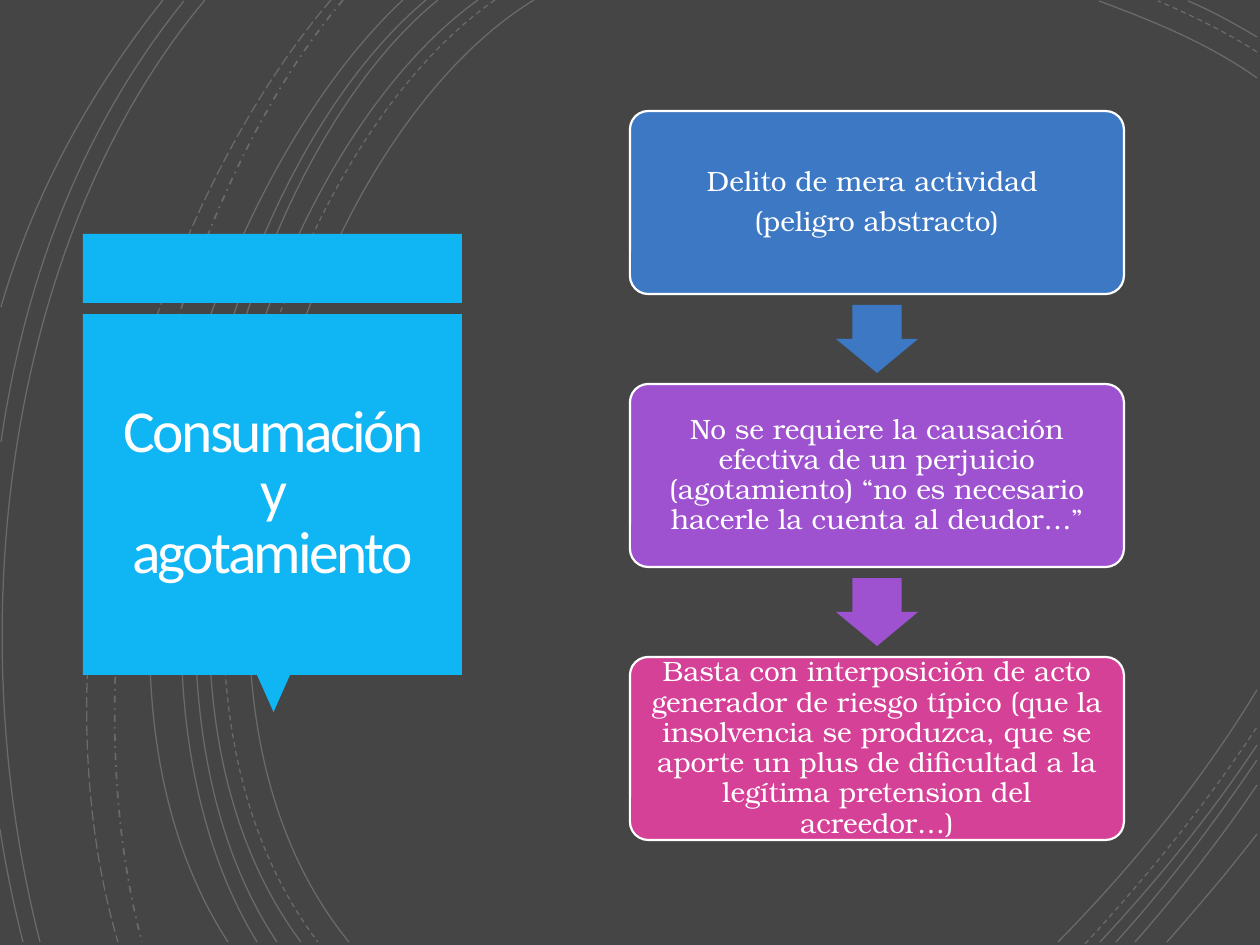
"""Build the slide on consummation and exhaustion of the offence."""
import pptx
import pptx.dml.color
import pptx.enum.dml
import pptx.enum.shapes
import pptx.enum.text
import pptx.oxml
import pptx.oxml.ns
import pptx.util

SHAPE = pptx.enum.shapes.MSO_SHAPE
DASH = pptx.enum.dml.MSO_LINE
SCALE = 914400 / 126
WIDTH, HEIGHT = 1260, 945
BACKGROUND, CYAN, WHITE = "454545", "10B6F4", "FFFFFF"

TITLE = "Consumación y agotamiento"
STEPS = [
    ("3C78C3", ["Delito de mera actividad ", "(peligro abstracto)"]),
    ("9F52D0", ["No se requiere la causación efectiva de un perjuicio (agotamiento) "
                "“no es necesario hacerle la cuenta al deudor…”"]),
    ("D64198", ["Basta con interposición de acto generador de riesgo típico (que la "
                "insolvencia se produzca, que se aporte un plus de dificultad a la "
                "legítima pretension del acreedor…)"]),
]
BOX_LEFT, BOX_TOP, BOX_WIDTH, BOX_HEIGHT, STEP_PITCH = 630, 111, 494, 183, 273
ARROW_LENGTH, ARROW_BREADTH = 68, 82

CURVES = {
    (DASH.SOLID, 0.75): [
        [(534, 0), (297, 145), (135, 680), (349, 942)],
        [(1257, 78), (1208, 43), (1150, 20), (1099, 1)],
        [(1058, 942), (1130, 869), (1200, 784), (1257, 690)],
        [(478, 0), (255, 160), (103, 677), (301, 942)],
        [(1257, 37), (1235, 24), (1212, 11), (1188, 1)],
        [(1100, 942), (1155, 883), (1210, 816), (1257, 745)],
        [(438, 0), (231, 168), (103, 682), (277, 942)],
        [(1116, 942), (1166, 887), (1213, 825), (1257, 760)],
        [(426, 0), (218, 174), (92, 672), (257, 942)],
        [(1135, 942), (1178, 893), (1220, 840), (1257, 785)],
        [(403, 0), (205, 185), (50, 667), (228, 942)],
        [(1167, 942), (1197, 908), (1228, 872), (1257, 834)],
        [(205, 0), (10, 233), (-43, 617), (40, 942)],
        [(184, 1), (87, 121), (26, 270), (1, 442)],
        [(0, 829), (6, 868), (14, 906), (23, 942)],
        [(163, 0), (94, 87), (35, 189), (1, 307)],
    ],
    (DASH.DASH, 0.75): [
        [(495, 0), (268, 158), (116, 677), (318, 942)],
        [(1257, 52), (1226, 32), (1191, 15), (1158, 1)],
        [(1085, 944), (1145, 879), (1205, 806), (1257, 727)],
    ],
    (DASH.DASH_DOT, 1): [[(343, 0), (166, 209), (62, 641), (142, 942)]],
    (DASH.LONG_DASH, 0.75): [[(331, 0), (149, 213), (26, 629), (118, 942)]],
}


def px(length):
    return pptx.util.Emu(round(length * SCALE))


def paint(target, color):
    target.solid()
    target.fore_color.rgb = pptx.dml.color.RGBColor.from_string(color)


def add_curve(page, points, dash, weight):
    builder = page.shapes.build_freeform(*points[0], scale=SCALE)
    builder.add_line_segments(points[1:], close=False)
    curve = builder.convert_to_shape()
    curve.shadow.inherit = False
    curve.fill.background()
    paint(curve.line.fill, WHITE)
    curve.line.width = pptx.util.Pt(weight)
    curve.line.dash_style = dash
    name = pptx.oxml.ns.qn
    color = next(curve.line._ln.iter(name("a:srgbClr")))
    pptx.oxml.parse_xml(f'<a:alpha {pptx.oxml.ns.nsdecls("a")} val="20000"/>')
    color.append(pptx.oxml.parse_xml(f'<a:alpha {pptx.oxml.ns.nsdecls("a")} val="20000"/>'))
    segments = list(curve._element.iter(name("a:lnTo")))
    bezier = pptx.oxml.parse_xml(f'<a:cubicBezTo {pptx.oxml.ns.nsdecls("a")}/>')
    segments[0].addprevious(bezier)
    for segment in segments:
        bezier.append(segment[0])
        segment.getparent().remove(segment)


def add_block(page, kind, left, top, width, height, color, rotation=0):
    block = page.shapes.add_shape(kind, px(left), px(top), px(width), px(height))
    block.shadow.inherit = False
    block.rotation = rotation
    paint(block.fill, color)
    block.line.fill.background()
    return block


def write(block, lines, font, size, color, inset, spacing, after=0):
    frame = block.text_frame
    frame.word_wrap = True
    frame.vertical_anchor = pptx.enum.text.MSO_ANCHOR.MIDDLE
    frame.margin_left = frame.margin_right = px(inset)
    frame.margin_top = frame.margin_bottom = px(inset)
    frame.text = "\n".join(lines)
    for para in frame.paragraphs:
        para.alignment = pptx.enum.text.PP_ALIGN.CENTER
        para.line_spacing = spacing
        para.space_after = pptx.util.Pt(after)
        para.font.name = font
        para.font.size = pptx.util.Pt(size)
        paint(para.font.fill, color)


def add_title(page):
    add_block(page, SHAPE.RECTANGLE, 83, 234, 379, 69, CYAN)
    add_block(page, SHAPE.ISOSCELES_TRIANGLE, 257, 675, 33, 37, CYAN, 180)
    panel = add_block(page, SHAPE.RECTANGLE, 83, 314, 379, 361, CYAN)
    write(panel, [TITLE], "Calibri", 34, "FFFEFF", 39, 0.85)
    span = panel.text_frame.paragraphs[0].runs[0]
    span._r.get_or_add_rPr().set("spc", "-150")


def add_steps(page):
    for index, (color, lines) in enumerate(STEPS):
        top = BOX_TOP + index * STEP_PITCH
        box = add_block(page, SHAPE.ROUNDED_RECTANGLE, BOX_LEFT, top, BOX_WIDTH, BOX_HEIGHT, color)
        box.adjustments[0] = 0.1
        paint(box.line.fill, WHITE)
        box.line.width = pptx.util.Pt(1.25)
        write(box, lines, "TeX Gyre Bonum", 16, WHITE, 14, 0.9, 5.6)
        if index < len(STEPS) - 1:
            center_x = BOX_LEFT + BOX_WIDTH / 2
            center_y = top + (BOX_HEIGHT + STEP_PITCH) / 2
            arrow = add_block(page, SHAPE.RIGHT_ARROW, center_x - ARROW_LENGTH / 2,
                              center_y - ARROW_BREADTH / 2, ARROW_LENGTH, ARROW_BREADTH, color, 90)
            arrow.adjustments[0] = 0.6
            arrow.adjustments[1] = 0.5


def main():
    deck = pptx.Presentation()
    deck.slide_width, deck.slide_height = px(WIDTH), px(HEIGHT)
    page = deck.slides.add_slide(deck.slide_layouts[6])
    paint(page.background.fill, BACKGROUND)
    for (dash, weight), curves in CURVES.items():
        for points in curves:
            add_curve(page, points, dash, weight)
    add_title(page)
    add_steps(page)
    deck.save("out.pptx")


if __name__ == "__main__":
    main()
